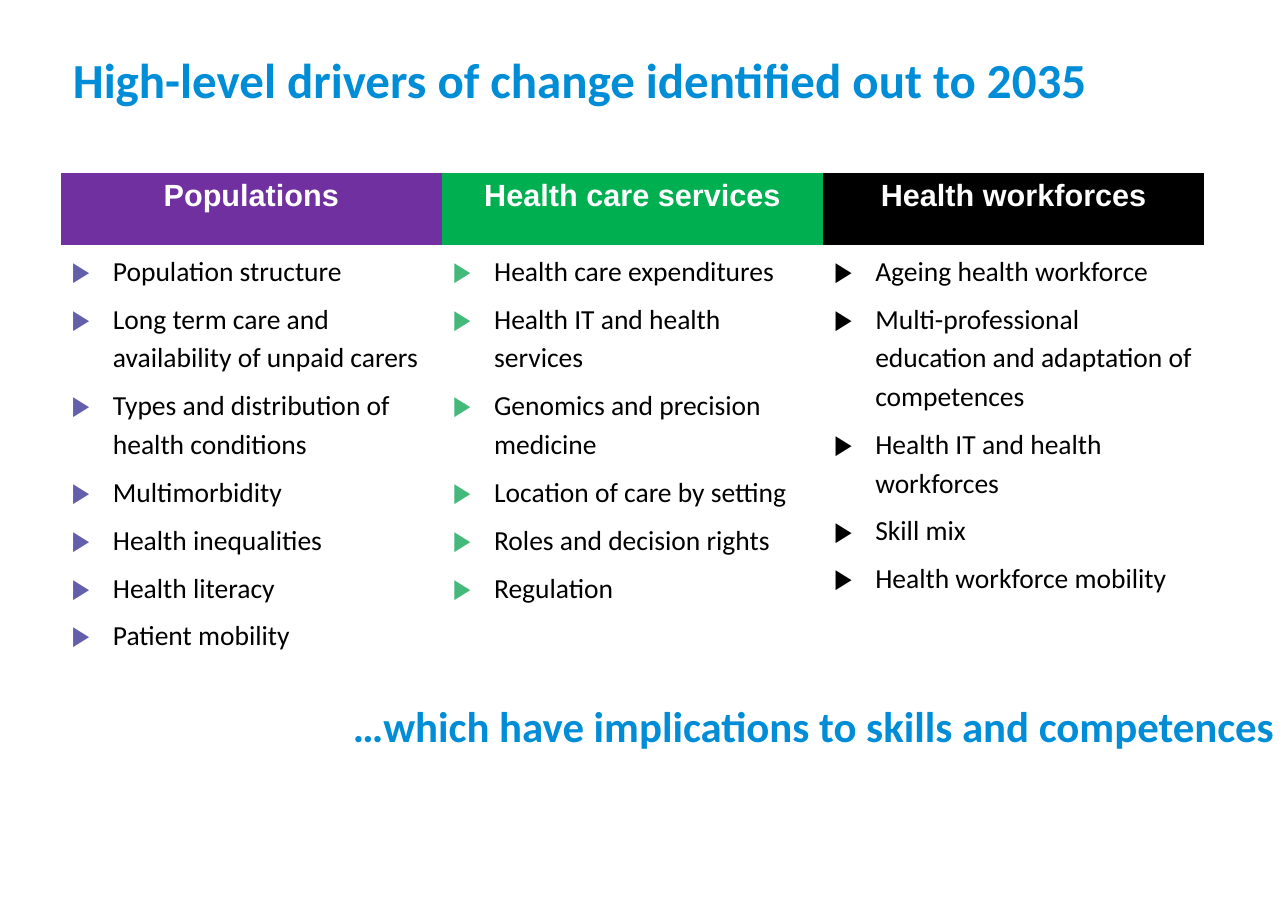
from lxml import etree
from pptx import Presentation
from pptx.dml.color import RGBColor
from pptx.enum.text import MSO_ANCHOR, PP_ALIGN
from pptx.oxml.ns import qn
from pptx.util import Cm, Pt

LEFT, CENTER, RIGHT = PP_ALIGN.LEFT, PP_ALIGN.CENTER, PP_ALIGN.RIGHT
TOP = MSO_ANCHOR.TOP
BLUE, WHITE, BLACK = "008DD7", "FFFFFF", "000000"
NO_GRID_STYLE = "{2D5ABB26-0587-4C30-8999-92F81FD0307C}"
HEADER_HEIGHT, BODY_HEIGHT, BULLET_INDENT = 1.65, 9.27, 0.95

DRIVERS = [
    ("Populations", "7030A0", "645FAA", [
        "Population structure",
        "Long term care and availability of unpaid carers",
        "Types and distribution of health conditions",
        "Multimorbidity",
        "Health inequalities",
        "Health literacy",
        "Patient mobility",
    ]),
    ("Health care services", "00B050", "45B97C", [
        "Health care expenditures",
        "Health IT and health services",
        "Genomics and precision medicine",
        "Location of care by setting",
        "Roles and decision rights",
        "Regulation",
    ]),
    ("Health workforces", BLACK, BLACK, [
        "Ageing health workforce",
        "Multi-professional education and adaptation of competences",
        "Health IT and health workforces",
        "Skill mix",
        "Health workforce mobility",
    ]),
]


def rgb(value):
    """Turn a hex string into a colour."""
    return RGBColor.from_string(value)


def write(paragraph, text, size=18, font="Calibri", color=BLACK, bold=False, align=LEFT):
    """Add formatted text to a paragraph."""
    paragraph.alignment = align
    run = paragraph.add_run()
    run.text = text
    run.font.size = Pt(size)
    run.font.name = font
    run.font.bold = bold
    run.font.color.rgb = rgb(color)


def add_bullet(paragraph, color):
    """Give a paragraph a triangular bullet with a hanging indent."""
    properties = paragraph._p.get_or_add_pPr()
    properties.set("marL", str(Cm(BULLET_INDENT)))
    properties.set("indent", str(-Cm(BULLET_INDENT)))
    bullet_color = etree.SubElement(properties, qn("a:buClr"))
    etree.SubElement(bullet_color, qn("a:srgbClr"), val=color)
    etree.SubElement(properties, qn("a:buFont"), typeface="Arial")
    etree.SubElement(properties, qn("a:buChar"), char="▶")


def place_title(slide, left, top, width, height):
    """Move the title placeholder into its box and fill it."""
    title = slide.shapes.title
    title.left, title.top, title.width, title.height = map(Cm, (left, top, width, height))
    frame = title.text_frame
    frame.vertical_anchor = TOP
    frame.margin_left = frame.margin_right = Cm(0.28)
    frame.margin_top = frame.margin_bottom = Cm(0.15)
    write(frame.paragraphs[0], "High-level drivers of change identified out to 2035",
          size=32, color=BLUE, bold=True)


def fill_driver_cell(cell, drivers, bullet_color):
    """List the drivers of one column."""
    cell.fill.background()
    frame = cell.text_frame
    for index, driver in enumerate(drivers):
        paragraph = frame.add_paragraph() if index else frame.paragraphs[0]
        add_bullet(paragraph, bullet_color)
        paragraph.line_spacing = 1.15
        paragraph.space_after = Pt(6)
        write(paragraph, driver)


def add_driver_table(slide, left, top, width):
    """Build the table with one column for each group of drivers."""
    table = slide.shapes.add_table(2, len(DRIVERS), Cm(left), Cm(top), Cm(width),
                                   Cm(HEADER_HEIGHT + BODY_HEIGHT)).table
    table._tbl.tblPr.find(qn("a:tableStyleId")).text = NO_GRID_STYLE
    table.horz_banding = False
    table.rows[0].height = Cm(HEADER_HEIGHT)
    table.rows[1].height = Cm(BODY_HEIGHT)
    for column, (heading, fill, bullet_color, drivers) in enumerate(DRIVERS):
        table.columns[column].width = Cm(width / len(DRIVERS))
        header = table.cell(0, column)
        header.fill.solid()
        header.fill.fore_color.rgb = rgb(fill)
        write(header.text_frame.paragraphs[0], heading, size=20, font="Arial",
              color=WHITE, bold=True, align=CENTER)
        fill_driver_cell(table.cell(1, column), drivers, bullet_color)


def add_conclusion(slide, left, top, width, height):
    """Add the closing statement, aligned to the right of its box."""
    conclusion = slide.shapes.add_textbox(Cm(left), Cm(top), Cm(width), Cm(height))
    conclusion.text_frame.word_wrap = False
    write(conclusion.text_frame.paragraphs[0],
          "…which have implications to skills and competences",
          size=28, color=BLUE, bold=True, align=RIGHT)


def main():
    """Build and save the slide."""
    presentation = Presentation()
    presentation.slide_width, presentation.slide_height = Cm(29.7), Cm(21)
    slide = presentation.slides.add_slide(presentation.slide_layouts[5])
    place_title(slide, 1.4, 1, 25.83, 1.65)
    add_driver_table(slide, 1.4, 3.99, 26.37)
    add_conclusion(slide, 7.62, 16, 22, 1.45)
    presentation.save("out.pptx")


if __name__ == "__main__":
    main()
